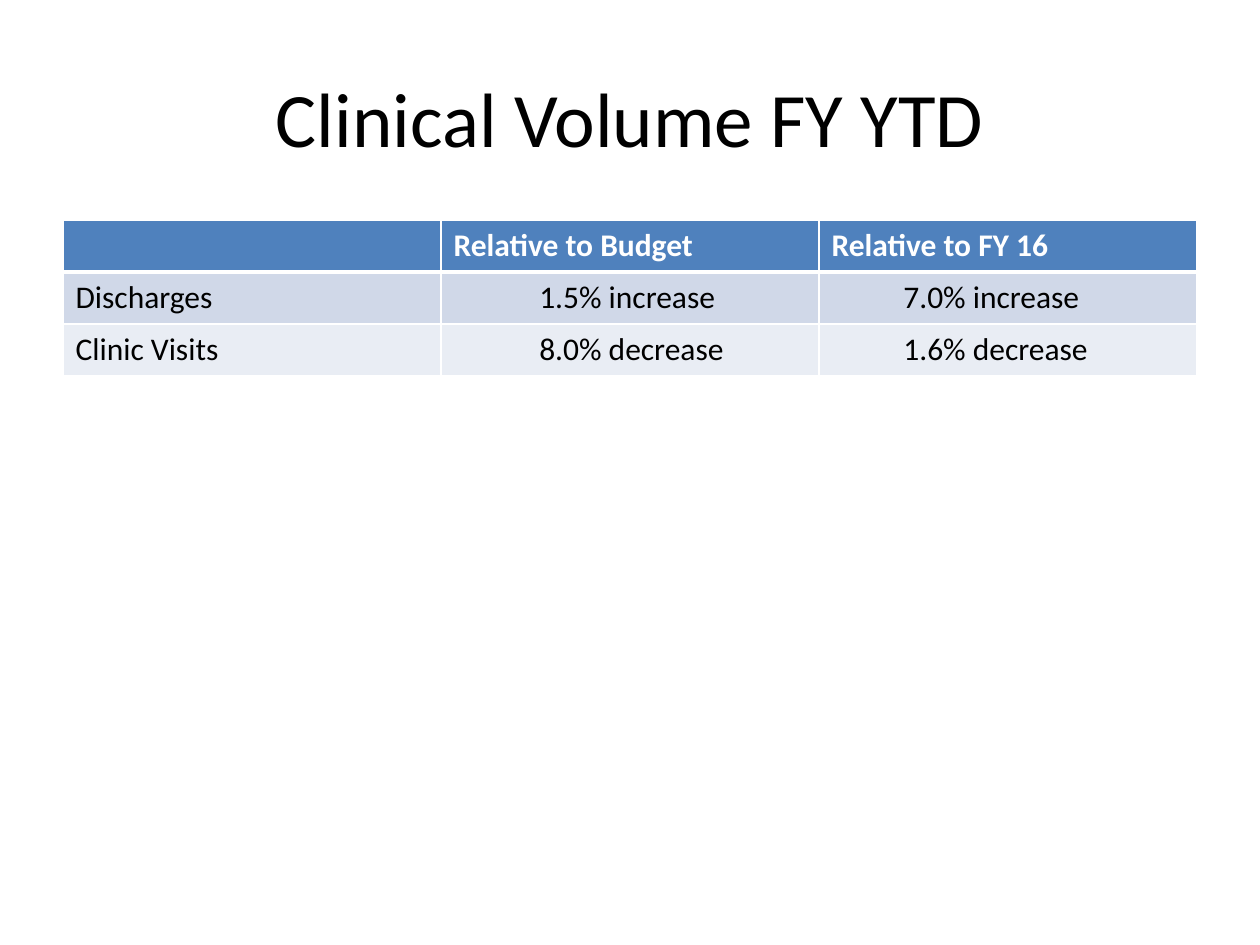
from dataclasses import dataclass

import pptx
import pptx.dml.color
import pptx.enum.text
import pptx.oxml
import pptx.oxml.ns
import pptx.util
from pptx.util import Inches

FONT = "Calibri"
HUES = {
    "head": "4F81BD",
    "odd": "D0D8E8",
    "even": "E9EDF4",
    "rule": "FFFFFF",
    "light": "FFFFFF",
    "dark": "000000",
}


@dataclass
class Row:
    texts: tuple[str, str, str]
    fill: str
    ink: str = "dark"
    bold: bool = False
    insets: tuple[float, float, float] = (0.1, 0.78, 0.67)
    top: int = 1
    base: int = 1


ROWS = [
    Row(("", "Relative to Budget", "Relative to FY 16"), "head", "light",
        True, (0.1, 0.1, 0.1), base=3),
    Row(("Discharges", "1.5% increase", "7.0% increase"), "odd", top=3),
    Row(("Clinic Visits", "8.0% decrease", "1.6% decrease"), "even"),
]


def color(name: str) -> pptx.dml.color.RGBColor:
    return pptx.dml.color.RGBColor.from_string(HUES[name])


def style(font, size: int, ink: str, bold: bool = False) -> None:
    font.name, font.size, font.bold = FONT, pptx.util.Pt(size), bold
    font.color.rgb = color(ink)


def border(cell, top: int, base: int) -> None:
    props = cell._tc.get_or_add_tcPr()
    for side, width in (("L", 1), ("R", 1), ("T", top), ("B", base)):
        props.append(pptx.oxml.parse_xml(
            f'<a:ln{side} {pptx.oxml.ns.nsdecls("a")} w="{pptx.util.Pt(width)}">'
            f'<a:solidFill><a:srgbClr val="{HUES["rule"]}"/></a:solidFill>'
            f'</a:ln{side}>'))


def draw(table, index: int, row: Row) -> None:
    table.rows[index].height = Inches(0.41)
    for col, (text, inset) in enumerate(zip(row.texts, row.insets)):
        cell = table.cell(index, col)
        border(cell, row.top, row.base)
        cell.fill.solid()
        cell.fill.fore_color.rgb = color(row.fill)
        cell.margin_left = Inches(inset)
        cell.text = text
        style(cell.text_frame.paragraphs[0].font, 18, row.ink, row.bold)


def main() -> None:
    deck = pptx.Presentation()
    deck.slide_width, deck.slide_height = Inches(10), Inches(7.5)
    slide = deck.slides.add_slide(deck.slide_layouts[5])

    # Title
    title = slide.shapes.title
    title.left, title.top = Inches(0.5), Inches(0.3)
    title.width, title.height = Inches(9), Inches(1.25)
    frame = title.text_frame
    frame.text = "Clinical Volume FY YTD"
    frame.vertical_anchor = pptx.enum.text.MSO_ANCHOR.MIDDLE
    para = frame.paragraphs[0]
    para.alignment = pptx.enum.text.PP_ALIGN.CENTER
    style(para.font, 44, "dark")

    # Volume table
    table = slide.shapes.add_table(
        len(ROWS), 3, Inches(0.5), Inches(1.75), Inches(9), Inches(1.23)).table
    for index, row in enumerate(ROWS):
        draw(table, index, row)

    deck.save("out.pptx")


if __name__ == "__main__":
    main()
